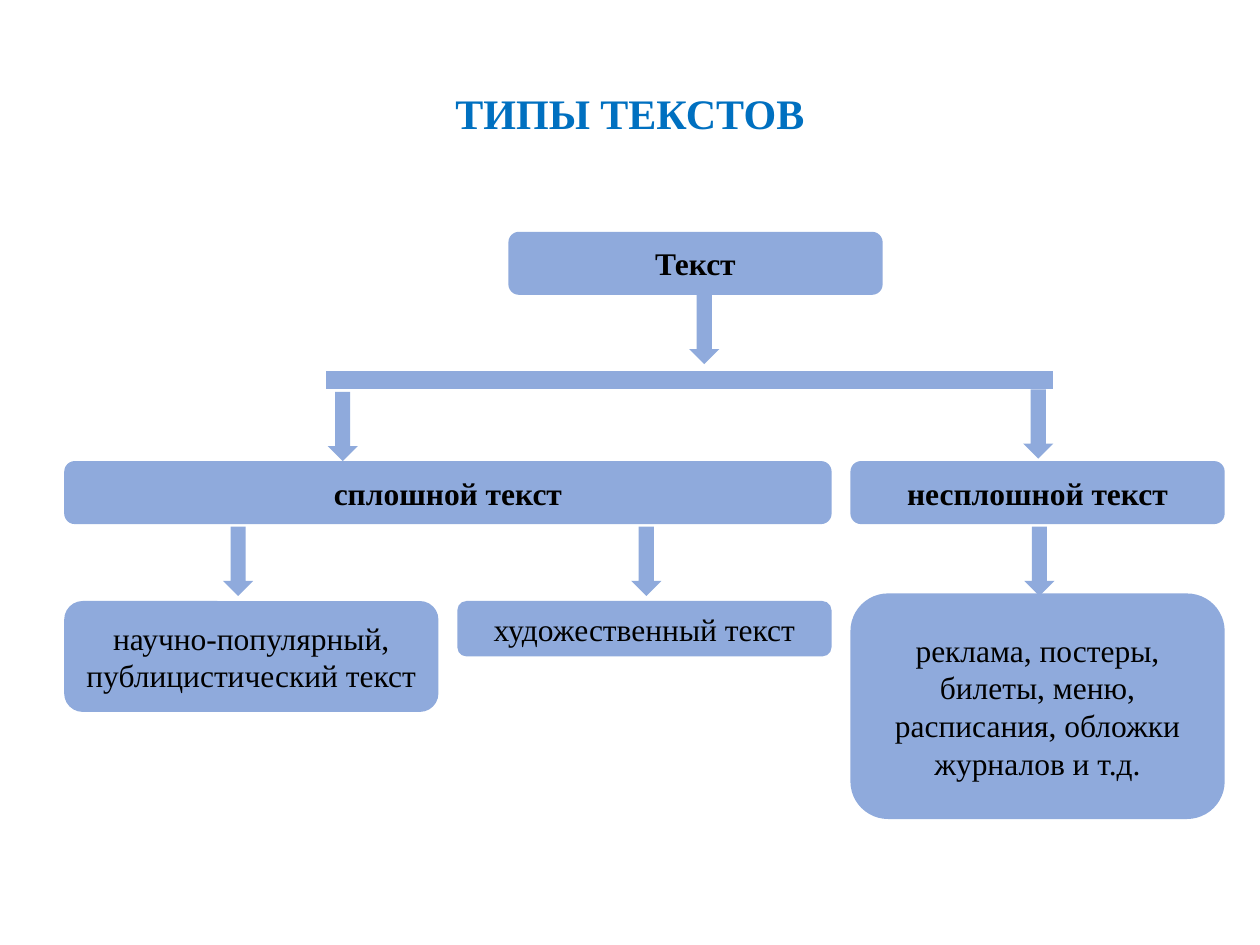
from dataclasses import dataclass
from pptx import Presentation
from pptx.dml.color import RGBColor
from pptx.enum.shapes import MSO_SHAPE
from pptx.enum.text import MSO_ANCHOR, PP_ALIGN
from pptx.util import Inches, Pt


@dataclass(frozen=True)
class Theme:
    font: str = "Times New Roman"
    fill: RGBColor = RGBColor(0x8F, 0xAA, 0xDC)
    ink: RGBColor = RGBColor(0, 0, 0)
    head: RGBColor = RGBColor(0x00, 0x70, 0xC0)
    big: int = 24
    size: int = 18


THEME = Theme()
TITLE = "ТИПЫ ТЕКСТОВ"

# text, column, columns spanned, top, height, bold
BOXES = [
    ("Текст", 1.13, 1, 1.84, 0.5, True),
    ("сплошной текст", 0, 2, 3.66, 0.5, True),
    ("несплошной текст", 2, 1, 3.66, 0.5, True),
    ("научно-популярный, публицистический текст", 0, 1, 4.77, 0.88, False),
    ("художественный текст", 1, 1, 4.77, 0.44, False),
    ("реклама, постеры, билеты, меню, расписания, обложки журналов и т.д.",
     2, 1, 4.71, 1.79, False),
]
# centre, top
ARROWS = [(5.59, 2.34), (2.72, 3.11), (8.24, 3.09),
          (1.89, 4.18), (5.13, 4.18), (8.25, 4.18)]
BAR = (1.55, 2.78, 7.85, 0.47)
LEFT, STEP, GAP = 0.51, 3.12, 0.15
WIDE, TALL = 0.24, 0.55


def write(frame, text, size, color, bold):
    frame.word_wrap = True
    frame.vertical_anchor = MSO_ANCHOR.MIDDLE
    para = frame.paragraphs[0]
    para.alignment = PP_ALIGN.CENTER
    run = para.add_run()
    run.text = text
    font = run.font
    font.name, font.size, font.bold = THEME.font, Pt(size), bold
    font.color.rgb = color
    return para


def draw(slide, kind, *place):
    shape = slide.shapes.add_shape(kind, *map(Inches, place))
    shape.shadow.inherit = False
    shape.fill.solid()
    shape.fill.fore_color.rgb = THEME.fill
    shape.line.fill.background()
    return shape


def main():
    deck = Presentation()
    deck.slide_width, deck.slide_height = Inches(10), Inches(7.5)
    slide = deck.slides.add_slide(deck.slide_layouts[5])

    title = slide.shapes.title
    title.left, title.top = Inches(0.5), Inches(0.67)
    title.width, title.height = Inches(9), Inches(0.5)
    para = write(title.text_frame, TITLE, THEME.big, THEME.head, True)
    para.line_spacing = 0.9

    for text, col, span, top, high, bold in BOXES:
        box = draw(slide, MSO_SHAPE.ROUNDED_RECTANGLE,
                   LEFT + col * STEP, top, span * STEP - GAP, high)
        write(box.text_frame, text, THEME.size, THEME.ink, bold)

    bar = draw(slide, MSO_SHAPE.MATH_MINUS, *BAR)
    bar.adjustments[0] = 0.3

    for mid, top in ARROWS:
        draw(slide, MSO_SHAPE.DOWN_ARROW, mid - WIDE / 2, top, WIDE, TALL)

    deck.save("out.pptx")


if __name__ == "__main__":
    main()
